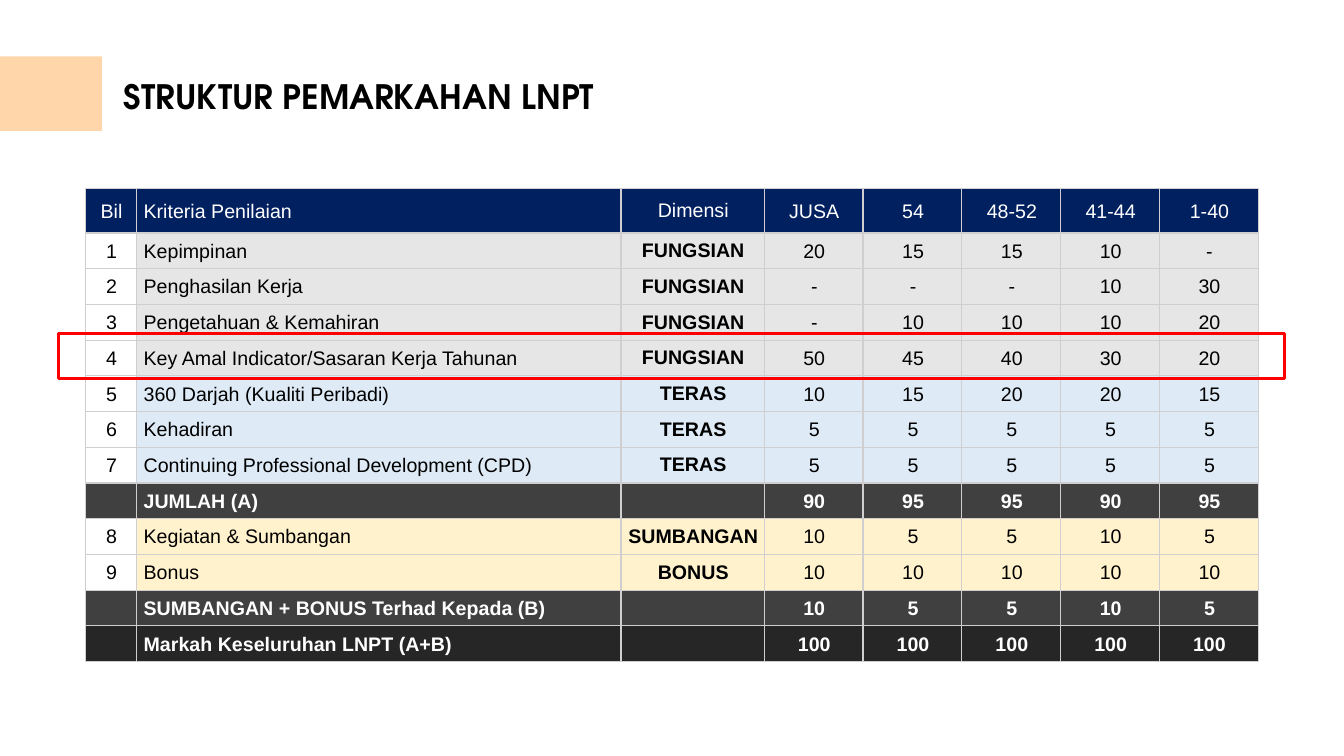
from dataclasses import dataclass

from lxml import etree
from pptx import Presentation
from pptx import util as u
from pptx.dml.color import RGBColor
from pptx.enum import shapes, text
from pptx.oxml import ns

WHITE = RGBColor(0xFF, 0xFF, 0xFF)
BLACK = RGBColor(0x00, 0x00, 0x00)
PEACH = RGBColor(0xFF, 0xD6, 0xA9)
NAVY = RGBColor(0x00, 0x20, 0x60)
GREY = RGBColor(0xE7, 0xE6, 0xE6)
BLUE = RGBColor(0xDE, 0xEB, 0xF7)
YELLOW = RGBColor(0xFF, 0xF2, 0xCC)
CHARCOAL = RGBColor(0x40, 0x40, 0x40)
NEAR_BLACK = RGBColor(0x26, 0x26, 0x26)
BORDER = RGBColor(0xD0, 0xCE, 0xCE)
RED = RGBColor(0xFF, 0x00, 0x00)

TITLE_FONT = "TeX Gyre Adventor"
TABLE_FONT = "Arial"
NUMBER_COLUMN, CRITERION_COLUMN, DIMENSION_COLUMN = range(3)
COLUMN_WIDTHS = [1.27, 12.22, 3.61] + [2.49] * 5
HEADER_HEIGHT, ROW_HEIGHT = 1.12, 0.9


@dataclass(frozen=True)
class Box:
    left: float
    top: float
    width: float
    height: float

    def lengths(self) -> list[u.Length]:
        return [u.Cm(value) for value in (self.left, self.top, self.width, self.height)]


@dataclass(frozen=True)
class RowStyle:
    fill: RGBColor
    number_fill: RGBColor
    color: RGBColor
    bold: bool = False
    bold_dimension: bool = False


@dataclass(frozen=True)
class ScoreRow:
    style: RowStyle
    number: str
    criterion: str
    dimension: str
    scores: str

    def values(self) -> list[str]:
        return [self.number, self.criterion, self.dimension, *self.scores.split()]


HEADER = RowStyle(NAVY, NAVY, WHITE)
FUNCTIONAL = RowStyle(GREY, WHITE, BLACK, bold_dimension=True)
CORE = RowStyle(BLUE, WHITE, BLACK, bold_dimension=True)
EXTRA = RowStyle(YELLOW, WHITE, BLACK, bold_dimension=True)
SUBTOTAL = RowStyle(CHARCOAL, CHARCOAL, WHITE, bold=True)
TOTAL = RowStyle(NEAR_BLACK, NEAR_BLACK, WHITE, bold=True)

SCORE_ROWS = [
    ScoreRow(HEADER, "Bil", "Kriteria Penilaian", "Dimensi", "JUSA 54 48-52 41-44 1-40"),
    ScoreRow(FUNCTIONAL, "1", "Kepimpinan", "FUNGSIAN", "20 15 15 10 -"),
    ScoreRow(FUNCTIONAL, "2", "Penghasilan Kerja", "FUNGSIAN", "- - - 10 30"),
    ScoreRow(FUNCTIONAL, "3", "Pengetahuan & Kemahiran", "FUNGSIAN", "- 10 10 10 20"),
    ScoreRow(FUNCTIONAL, "4", "Key Amal Indicator/Sasaran Kerja Tahunan", "FUNGSIAN", "50 45 40 30 20"),
    ScoreRow(CORE, "5", "360 Darjah (Kualiti Peribadi)", "TERAS", "10 15 20 20 15"),
    ScoreRow(CORE, "6", "Kehadiran", "TERAS", "5 5 5 5 5"),
    ScoreRow(CORE, "7", "Continuing Professional Development (CPD)", "TERAS", "5 5 5 5 5"),
    ScoreRow(SUBTOTAL, "", "JUMLAH (A)", "", "90 95 95 90 95"),
    ScoreRow(EXTRA, "8", "Kegiatan & Sumbangan", "SUMBANGAN", "10 5 5 10 5"),
    ScoreRow(EXTRA, "9", "Bonus", "BONUS", "10 10 10 10 10"),
    ScoreRow(SUBTOTAL, "", "SUMBANGAN + BONUS Terhad Kepada (B)", "", "10 5 5 10 5"),
    ScoreRow(TOTAL, "", "Markah Keseluruhan LNPT (A+B)", "", "100 100 100 100 100"),
]


def format_runs(paragraph, font_name: str, size: float, color: RGBColor, bold: bool) -> None:
    for run in paragraph.runs:
        run.font.name = font_name
        run.font.size = u.Pt(size)
        run.font.bold = bold
        run.font.color.rgb = color


def add_rectangle(slide, box: Box):
    shape = slide.shapes.add_shape(shapes.MSO_SHAPE.RECTANGLE, *box.lengths())
    shape.shadow.inherit = False
    return shape


def set_title(slide, wording: str, box: Box) -> None:
    title = slide.shapes.title
    title.left, title.top, title.width, title.height = box.lengths()
    frame = title.text_frame
    frame.text = wording
    frame.word_wrap = True
    frame.auto_size = text.MSO_AUTO_SIZE.SHAPE_TO_FIT_TEXT
    frame.vertical_anchor = text.MSO_ANCHOR.TOP
    frame.paragraphs[0].alignment = text.PP_ALIGN.LEFT
    format_runs(frame.paragraphs[0], TITLE_FONT, 24, BLACK, True)


def add_borders(cell) -> None:
    properties = cell._tc.get_or_add_tcPr()
    for position, side in enumerate(("lnL", "lnR", "lnT", "lnB")):
        line = etree.Element(ns.qn(f"a:{side}"), w=str(u.Pt(1)))
        fill = etree.SubElement(line, ns.qn("a:solidFill"))
        etree.SubElement(fill, ns.qn("a:srgbClr"), val=str(BORDER))
        properties.insert(position, line)


def fill_cell(cell, value: str, column: int, style: RowStyle) -> None:
    is_dimension = column == DIMENSION_COLUMN
    cell.fill.solid()
    cell.fill.fore_color.rgb = style.number_fill if column == NUMBER_COLUMN else style.fill
    cell.vertical_anchor = text.MSO_ANCHOR.MIDDLE
    cell.margin_left = cell.margin_right = u.Cm(0 if is_dimension else 0.16)
    cell.margin_top = u.Cm(0 if is_dimension else 0.03)
    cell.margin_bottom = 0
    add_borders(cell)
    cell.text_frame.text = value
    paragraph = cell.text_frame.paragraphs[0]
    is_criterion = column == CRITERION_COLUMN
    paragraph.alignment = text.PP_ALIGN.LEFT if is_criterion else text.PP_ALIGN.CENTER
    paragraph._p.get_or_add_pPr().set("marL", str(u.Cm(0.03)))
    bold = style.bold or (is_dimension and style.bold_dimension)
    format_runs(paragraph, TABLE_FONT, 14, style.color, bold)


def add_score_table(slide, left: float, top: float) -> None:
    row_heights = [HEADER_HEIGHT] + [ROW_HEIGHT] * (len(SCORE_ROWS) - 1)
    box = Box(left, top, sum(COLUMN_WIDTHS), sum(row_heights))
    table = slide.shapes.add_table(len(row_heights), len(COLUMN_WIDTHS), *box.lengths()).table
    table.horz_banding = False
    for column, width in zip(table.columns, COLUMN_WIDTHS):
        column.width = u.Cm(width)
    for row, height, score_row in zip(table.rows, row_heights, SCORE_ROWS):
        row.height = u.Cm(height)
        for column, value in enumerate(score_row.values()):
            fill_cell(row.cells[column], value, column, score_row.style)


def main() -> None:
    presentation = Presentation()
    presentation.slide_width = u.Cm(33.87)
    presentation.slide_height = u.Cm(19.05)
    slide = presentation.slides.add_slide(presentation.slide_layouts.get_by_name("Title Only"))

    banner = add_rectangle(slide, Box(0, 1.42, 2.57, 1.88))
    banner.fill.solid()
    banner.fill.fore_color.rgb = PEACH
    banner.line.fill.background()

    set_title(slide, "STRUKTUR PEMARKAHAN LNPT", Box(2.87, 1.78, 16.2, 1.27))
    add_score_table(slide, 2.16, 4.75)

    highlight = add_rectangle(slide, Box(1.47, 8.41, 30.91, 1.14))
    highlight.fill.background()
    highlight.line.color.rgb = RED
    highlight.line.width = u.Pt(2.25)

    presentation.save("out.pptx")


if __name__ == "__main__":
    main()
